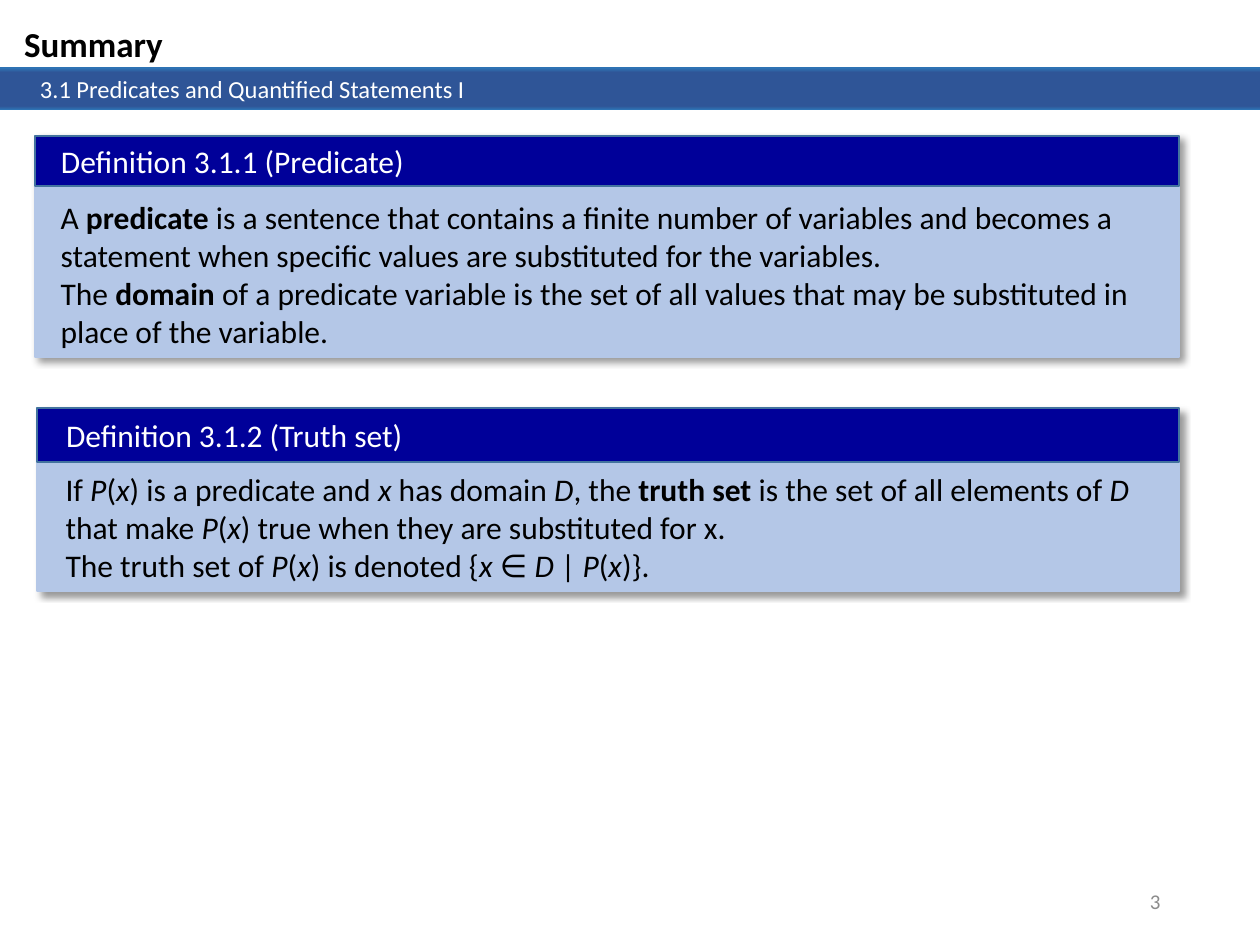
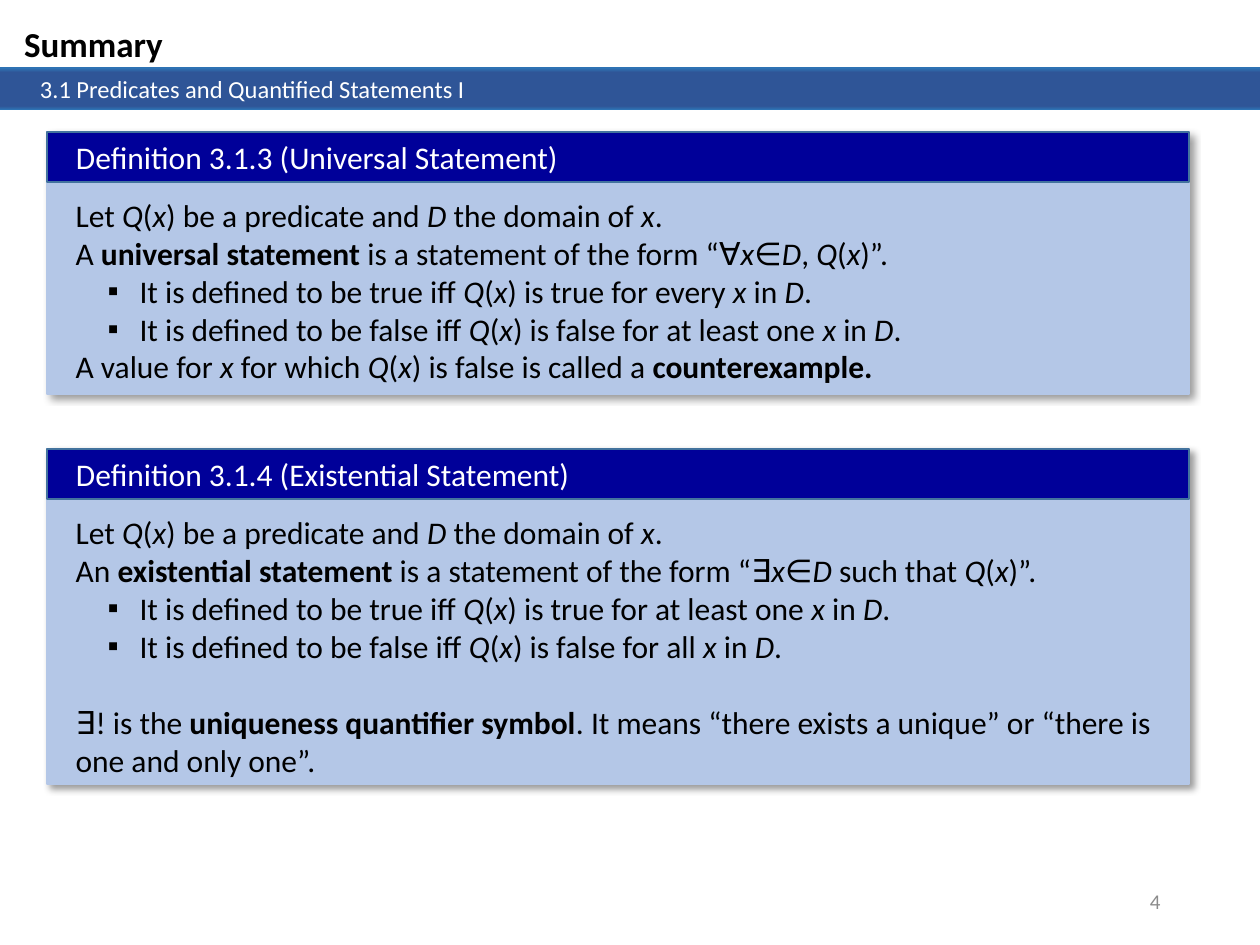
from dataclasses import dataclass

from lxml.etree import SubElement
from pptx import Presentation
from pptx.dml.color import RGBColor
from pptx.enum.shapes import MSO_SHAPE
from pptx.enum.text import MSO_ANCHOR, MSO_AUTO_SIZE, PP_ALIGN
from pptx.oxml.ns import qn
from pptx.util import Pt

# Shared look
EMU_PER_PX = 914400 / 126
SLIDE_W, SLIDE_H = 1260, 945
TWO_CONTENT = 3
FONT = "Calibri"
WHITE, BLACK, GREY = "FFFFFF", "000000", "8C8C8C"
PANEL_FILL, HEADER_FILL, HEADER_LINE = "B4C7E7", "000099", "43739E"
BAND_STOPS = [(0, "2E75B6"), (11, "2F5597"), (91, "2F5597"), (100, "2E75B6")]
INSET = 13
BULLET_LEFT, BULLET_HANG = 64, 32

TITLE = "Summary"
SECTION = "3.1 Predicates and Quantified Statements I"


@dataclass
class Definition:
    """A panel; in its lines * marks italic, ** bold and a leading - a bullet."""
    heading: str
    lines: list
    left: int
    top: int
    width: int
    height: int
    header_h: int = 50
    text_left: int = 63
    body_gap: int = 8
    last_gap: int = 0


SLIDES = {
    3: [
        Definition("Definition 3.1.1 (Predicate)", [
            "A **predicate** is a sentence that contains a finite number of variables "
            "and becomes a statement when specific values are substituted for the variables.",
            "The **domain** of a predicate variable is the set of all values that may be "
            "substituted in place of the variable.",
        ], 35, 136, 1144, 221, text_left=48, body_gap=6),
        Definition("Definition 3.1.2 (Truth set)", [
            "If *P*(*x*) is a predicate and *x* has domain *D*, the **truth set** is the set "
            "of all elements of *D* that make *P*(*x*) true when they are substituted for x.",
            "The truth set of *P*(*x*) is denoted {*x *∈ *D* | *P*(*x*)}.",
        ], 37, 408, 1142, 183, header_h=54, text_left=53, body_gap=2),
    ],
    4: [
        Definition("Definition 3.1.3 (Universal Statement)", [
            "Let *Q*(*x*) be a predicate and *D* the domain of *x*.",
            "A **universal statement** is a statement of the form “∀*x*∈*D*, *Q*(*x*)”.",
            "-It is defined to be true iff *Q*(*x*) is true for every *x* in *D*.",
            "-It is defined to be false iff *Q*(*x*) is false for at least one *x* in *D*.",
            "A value for *x* for which *Q*(*x*) is false is called a **counterexample.**",
        ], 47, 132, 1142, 262),
        Definition("Definition 3.1.4 (Existential Statement)", [
            "Let *Q*(*x*) be a predicate and *D* the domain of *x*.",
            "An **existential statement** is a statement of the form "
            "“∃*x*∈*D* such that *Q*(*x*)”.",
            "-It is defined to be true iff *Q*(*x*) is true for at least one *x* in *D*.",
            "-It is defined to be false iff *Q*(*x*) is false for all *x* in *D*.",
            "∃! is the **uniqueness quantifier symbol**. It means “there exists a unique” "
            "or “there is one and only one”.",
        ], 47, 449, 1142, 335, last_gap=22),
    ],
}


def px(n):
    return round(n * EMU_PER_PX)


def rgb(color):
    return RGBColor.from_string(color)


def place(sp, left, top, width, height):
    sp.left, sp.top, sp.width, sp.height = map(px, (left, top, width, height))


def style_run(r, size, color, bold=False, italic=False):
    r.font.name, r.font.size = FONT, Pt(size)
    r.font.bold, r.font.italic = bold, italic
    r.font.color.rgb = rgb(color)


def set_text(sp, text, size, color, bold=False, align=PP_ALIGN.LEFT,
             anchor=MSO_ANCHOR.TOP, inset=INSET):
    tf = sp.text_frame
    tf.text = text
    tf.word_wrap, tf.auto_size = True, MSO_AUTO_SIZE.NONE
    tf.vertical_anchor, tf.margin_left = anchor, px(inset)
    p = tf.paragraphs[0]
    p.alignment = align
    style_run(p.runs[0], size, color, bold)


def add_rect(slide, box, fill=None, line=None):
    sp = slide.shapes.add_shape(MSO_SHAPE.RECTANGLE, *map(px, box))
    sp.shadow.inherit = False
    if fill:
        sp.fill.solid()
        sp.fill.fore_color.rgb = rgb(fill)
    if line:
        sp.line.color.rgb = rgb(line)
        sp.line.width = Pt(1)
    else:
        sp.line.fill.background()
    return sp


def add_shadow(sp):
    effects = sp._element.spPr.find(qn("a:effectLst"))
    shadow = SubElement(effects, qn("a:outerShdw"), blurRad=str(Pt(4)),
                        dist=str(Pt(3)), dir="2700000", algn="tl", rotWithShape="0")
    color = SubElement(shadow, qn("a:srgbClr"), val=BLACK)
    SubElement(color, qn("a:alpha"), val="40000")


def add_band(slide, top, height):
    sp = add_rect(slide, (0, top, SLIDE_W, height))
    sp.fill.gradient()
    sp.fill.gradient_angle = 270
    stops = sp._element.spPr.find(".//" + qn("a:gsLst"))
    for stop in list(stops):
        stops.remove(stop)
    for pos, color in BAND_STOPS:
        stop = SubElement(stops, qn("a:gs"), pos=str(pos * 1000))
        SubElement(stop, qn("a:srgbClr"), val=color)
    return sp


def add_marked_runs(p, line):
    for i, bold_part in enumerate(line.split("**")):
        for j, part in enumerate(bold_part.split("*")):
            if part:
                r = p.add_run()
                r.text = part
                style_run(r, 18, BLACK, bold=i % 2 == 1, italic=j % 2 == 1)


def set_bullet(p, bulleted):
    ppr = p._p.get_or_add_pPr()
    ppr.set("marL", str(px(BULLET_LEFT) if bulleted else 0))
    ppr.set("indent", str(px(-BULLET_HANG) if bulleted else 0))
    if bulleted:
        SubElement(ppr, qn("a:buFont"), typeface="Arial")
        SubElement(ppr, qn("a:buChar"), char="▪")
    else:
        SubElement(ppr, qn("a:buNone"))


def fill_body(body, lines, last_gap):
    tf = body.text_frame
    tf.word_wrap, tf.auto_size = True, MSO_AUTO_SIZE.NONE
    for n, line in enumerate(lines):
        p = tf.add_paragraph() if n else tf.paragraphs[0]
        p.alignment, p.line_spacing = PP_ALIGN.LEFT, 1.0
        p.space_before = Pt(last_gap if n == len(lines) - 1 else 0)
        p.space_after = Pt(0)
        set_bullet(p, line.startswith("-"))
        add_marked_runs(p, line.removeprefix("-"))


def add_definition(slide, d, body):
    panel = add_rect(slide, (d.left, d.top, d.width, d.height), PANEL_FILL, PANEL_FILL)
    add_shadow(panel)
    header = add_rect(slide, (d.left, d.top, d.width, d.header_h), HEADER_FILL, HEADER_LINE)
    set_text(header, d.heading, 18, WHITE, anchor=MSO_ANCHOR.MIDDLE,
             inset=d.text_left + INSET - d.left)
    # Body text lies in front of its panel
    body_top = d.top + d.header_h + d.body_gap
    place(body, d.text_left, body_top, 1106, d.top + d.height - body_top)
    fill_body(body, d.lines, d.last_gap)
    slide.shapes._spTree.append(body._element)


def add_frame(slide, number):
    # Title, section band and slide number
    title = slide.shapes.title
    place(title, 11, 16, 339, 55)
    set_text(title, TITLE, 20, BLACK, bold=True)
    add_band(slide, 67, 38)
    set_text(add_band(slide, 68, 42), SECTION, 14, WHITE, inset=40)
    number_box = slide.shapes.add_textbox(*map(px, (890, 876, 283, 50)))
    set_text(number_box, str(number), 12, GREY, align=PP_ALIGN.RIGHT,
             anchor=MSO_ANCHOR.MIDDLE)


def main():
    prs = Presentation()
    prs.slide_width, prs.slide_height = px(SLIDE_W), px(SLIDE_H)
    for number, definitions in SLIDES.items():
        slide = prs.slides.add_slide(prs.slide_layouts[TWO_CONTENT])
        bodies = list(slide.placeholders)[1:]
        add_frame(slide, number)
        for d, body in zip(definitions, bodies):
            add_definition(slide, d, body)
    prs.save("out.pptx")


if __name__ == "__main__":
    main()
